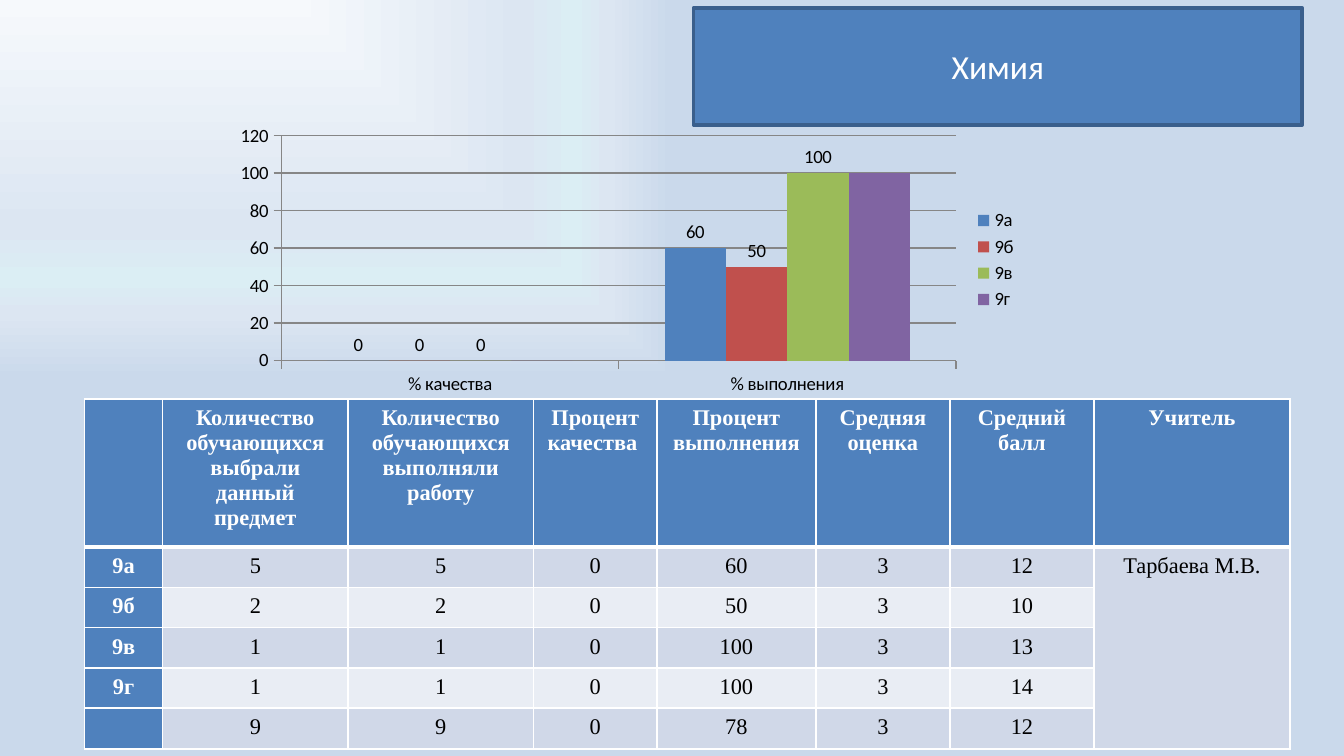
from lxml import etree
from pptx import Presentation
from pptx.chart.data import CategoryChartData
from pptx.dml.color import RGBColor
from pptx.enum import chart as ch, shapes, text
from pptx.oxml import parse_xml
from pptx.oxml.ns import nsdecls, qn
from pptx.util import Inches, Pt

TITLE = "Химия"
CATEGORIES = ["% качества", "% выполнения"]
# class, values, accent colour, labels shown
SERIES = [
    ("9а", (0, 60), "4F81BD", True),
    ("9б", (0, 50), "C0504D", True),
    ("9в", (0, 100), "9BBB59", True),
    ("9г", (0, 100), "8064A2", False),
]
HEADER = ["", "Количество обучающихся выбрали данный предмет",
          "Количество обучающихся выполняли работу", "Процент качества ",
          "Процент выполнения", "Средняя оценка", "Средний балл", "Учитель"]
RESULTS = [
    ("9а", 5, 5, 0, 60, 3, 12, "Тарбаева М.В."),
    ("9б", 2, 2, 0, 50, 3, 10, ""),
    ("9в", 1, 1, 0, 100, 3, 13, ""),
    ("9г", 1, 1, 0, 100, 3, 14, ""),
    ("", 9, 9, 0, 78, 3, 12, ""),
]
COL_WIDTHS = [0.58, 1.38, 1.38, 0.92, 1.18, 1, 1.07, 1.46]
ROW_HEIGHTS = [1.1] + [0.3] * len(RESULTS)
THEME = {
    "accent": "4F81BD", "outline": "3A5F8C", "white": "FFFFFF",
    "black": "000000", "grid": "868686", "bands": ("D0D8E8", "E9EDF4"),
    "background": [(0, "F6F9FC"), (60, "DCE6F2"), (74, "DBEEF4"),
                   (83, "DCE6F2"), (100, "CAD9EB")],
    "sans": "Calibri", "serif": "Times New Roman",
    "title": 18, "table": 12, "chart": 10,
}


def rgb(name):
    return RGBColor.from_string(THEME.get(name, name))


def set_font(font, face, size, color, bold=False):
    values = {"name": THEME[face], "size": Pt(THEME[size]), "bold": bold}
    for key, value in values.items():
        setattr(font, key, value)
    font.color.rgb = rgb(color)


def set_fill(obj, color):
    obj.fill.solid()
    obj.fill.fore_color.rgb = rgb(color)


def paint_background(s):
    """Rectangular gradient spreading from the top left corner."""
    stops = "".join(f'<a:gs pos="{pos * 1000}"><a:srgbClr val="{color}"/></a:gs>'
                    for pos, color in THEME["background"])
    s.background.fill.solid()
    bg_pr = s.element.find(".//" + qn("p:bgPr"))
    bg_pr.replace(bg_pr[0], parse_xml(
        f'<a:gradFill {nsdecls("a")} rotWithShape="1"><a:gsLst>{stops}</a:gsLst>'
        '<a:path path="rect"><a:fillToRect r="100000" b="100000"/></a:path>'
        '</a:gradFill>'))


def add_title(s):
    sp = s.shapes.add_shape(shapes.MSO_SHAPE.RECTANGLE, Inches(5.16),
                            Inches(0.06), Inches(4.53), Inches(0.87))
    sp.shadow.inherit = False
    set_fill(sp, "accent")
    sp.line.color.rgb = rgb("outline")
    sp.line.width = Pt(2)
    tf = sp.text_frame
    tf.word_wrap = True
    tf.vertical_anchor = text.MSO_ANCHOR.MIDDLE
    p = tf.paragraphs[0]
    p.alignment = text.PP_ALIGN.CENTER
    r = p.add_run()
    r.text = TITLE
    set_font(r.font, "sans", "title", "white")


def add_results_chart(s):
    data = CategoryChartData()
    data.categories = CATEGORIES
    for name, values, *_ in SERIES:
        data.add_series(name, values)
    chart = s.shapes.add_chart(ch.XL_CHART_TYPE.COLUMN_CLUSTERED, Inches(1.67),
                               Inches(0.89), Inches(6), Inches(2.09), data).chart
    set_font(chart.font, "sans", "chart", "black")
    chart.has_title = False
    chart.has_legend = True
    chart.legend.position = ch.XL_LEGEND_POSITION.RIGHT
    chart.legend.include_in_layout = False
    axis = chart.value_axis
    scale = {"minimum_scale": 0, "maximum_scale": 120, "major_unit": 20,
             "has_major_gridlines": True}
    for key, value in scale.items():
        setattr(axis, key, value)
    for part in (axis, chart.category_axis):
        part.major_tick_mark = ch.XL_TICK_MARK.OUTSIDE
    for line in (axis.format.line, chart.category_axis.format.line,
                 axis.major_gridlines.format.line):
        line.color.rgb = rgb("grid")
        line.width = Pt(0.75)
    plot = chart.plots[0]
    plot.gap_width = 150
    plot.vary_by_categories = False
    for series, (_, _, color, labelled) in zip(plot.series, SERIES):
        set_fill(series.format, color)
        series.invert_if_negative = False
        if labelled:
            series.data_labels.show_value = True
            series.data_labels.position = ch.XL_LABEL_POSITION.OUTSIDE_END


def add_borders(cell, bottom):
    tc_pr = cell._tc.get_or_add_tcPr()
    for i, side in enumerate("LRTB"):
        width = Pt(bottom if side == "B" else 1)
        tc_pr.insert(i, parse_xml(
            f'<a:ln{side} {nsdecls("a")} w="{width}"><a:solidFill>'
            f'<a:srgbClr val="{THEME["white"]}"/></a:solidFill></a:ln{side}>'))


def fill_cell(cell, value, row, col):
    heading = row == 0 or col == 0
    set_fill(cell, "accent" if heading else THEME["bands"][(row - 1) % 2])
    add_borders(cell, 3 if row == 0 else 1)
    p = cell.text_frame.paragraphs[0]
    p.alignment = text.PP_ALIGN.CENTER
    if value == "":
        # an empty cell must not force its row higher than the others
        etree.SubElement(p._p, qn("a:endParaRPr"), sz=str(THEME["table"] * 100))
        return
    r = p.add_run()
    r.text = str(value)
    set_font(r.font, "serif", "table", "white" if heading else "black", heading)


def add_results_table(s):
    rows = [HEADER, *RESULTS]
    table = s.shapes.add_table(len(rows), len(HEADER), Inches(0.63), Inches(2.97),
                               Inches(sum(COL_WIDTHS)),
                               Inches(sum(ROW_HEIGHTS))).table
    for column, width in zip(table.columns, COL_WIDTHS):
        column.width = Inches(width)
    for i, (row, height) in enumerate(zip(rows, ROW_HEIGHTS)):
        table.rows[i].height = Inches(height)
        for j, value in enumerate(row):
            fill_cell(table.cell(i, j), value, i, j)
    last = len(HEADER) - 1
    table.cell(1, last).merge(table.cell(len(RESULTS), last))


def main():
    prs = Presentation()
    prs.slide_width = Inches(10)
    prs.slide_height = prs.slide_width * 9 // 16
    s = prs.slides.add_slide(prs.slide_layouts[6])
    paint_background(s)
    add_title(s)
    add_results_chart(s)
    add_results_table(s)
    prs.save("out.pptx")


if __name__ == "__main__":
    main()
